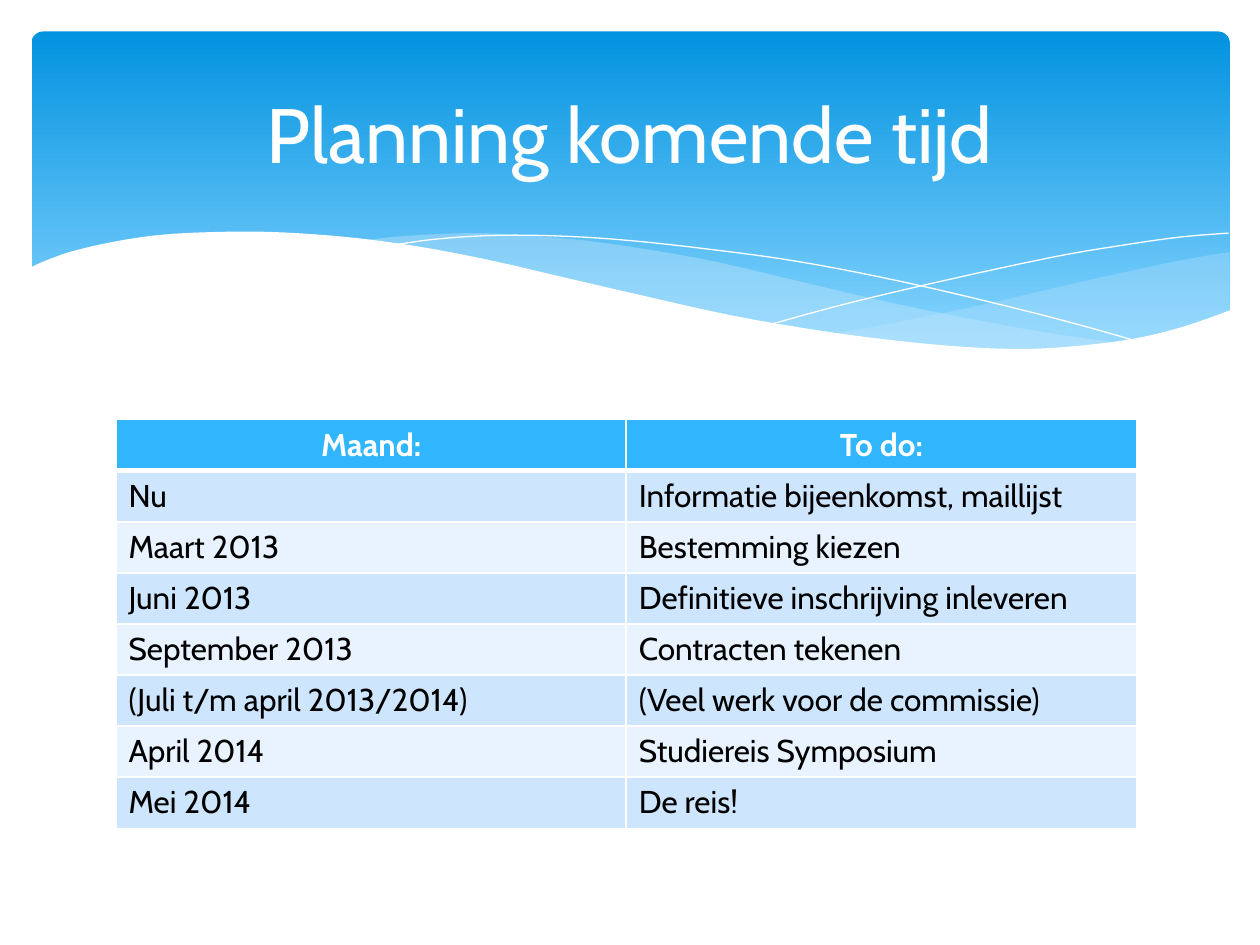
"""Build the planning slide: a wave banner with a title above a month table."""
from itertools import product

from lxml import etree
from pptx import Presentation
from pptx.dml.color import RGBColor
from pptx.enum import shapes, text
from pptx.oxml.ns import qn
from pptx.util import Inches, Pt

THEME = {
    "font": "Cabin", "title_size": 44, "table_size": 18,
    "white": "FFFFFF", "black": "000000",
    "banner_top": "0293E0", "banner_bottom": "83D3FE", "wave": "C6E7FC",
    "header": "31B6FD", "bands": ("CEE5FE", "E8F3FF"),
}
TITLE = "Planning komende tijd"
ROWS = [
    ("Maand:", "To do:"),
    ("Nu", "Informatie bijeenkomst, maillijst"),
    ("Maart 2013", "Bestemming kiezen"),
    ("Juni 2013", "Definitieve inschrijving inleveren"),
    ("September 2013", "Contracten tekenen"),
    ("(Juli t/m april 2013/2014)", "(Veel werk voor de commissie)"),
    ("April 2014", "Studiereis Symposium"),
    ("Mei 2014", "De reis!"),
]
RIGHT_WAVE = [
    [(9.76, 2), (9.35, 2.07), (8.61, 2.23), (7.79, 2.42), (7.06, 2.57), (6.61, 2.65)],
    [(6.61, 2.65), (7.05, 2.71), (7.57, 2.76), (8.03, 2.78), (8.54, 2.76),
     (8.97, 2.7), (9.35, 2.62), (9.76, 2.47)],
]
LEFT_WAVE = [
    [(8.93, 2.73), (8.37, 2.65), (7.75, 2.54), (7.06, 2.4), (6.29, 2.22),
     (5.69, 2.08), (5.14, 1.98), (4.65, 1.91), (4.2, 1.87), (3.8, 1.85),
     (3.44, 1.86), (3.13, 1.88), (2.86, 1.91)],
    [(2.86, 1.91), (3.42, 1.99), (4.04, 2.11), (4.91, 2.32), (5.66, 2.48),
     (6.34, 2.61), (6.95, 2.7), (7.48, 2.76), (7.96, 2.78), (8.48, 2.77), (8.93, 2.73)],
]
LONG_LINE = [[
    (3.09, 1.95), (3.44, 1.9), (3.87, 1.87), (4.33, 1.87), (4.89, 1.9),
    (5.56, 1.97), (6.36, 2.08), (7.27, 2.26), (8.31, 2.51), (9.07, 2.72)]]
SHORT_LINE = [[
    (6.13, 2.57), (6.72, 2.41), (7.48, 2.23), (8.36, 2.04), (8.95, 1.94),
    (9.38, 1.88), (9.75, 1.85)]]
WHITE_WAVE = [
    [(9.77, 2.46), (9.4, 2.59), (8.99, 2.69), (8.5, 2.75), (8.09, 2.77),
     (7.61, 2.75), (7.08, 2.7), (6.48, 2.62), (5.79, 2.5), (5.03, 2.33),
     (4.47, 2.2), (3.91, 2.07), (3.4, 1.97), (2.92, 1.9), (2.5, 1.86),
     (2.11, 1.84), (1.77, 1.84), (1.32, 1.86), (0.95, 1.91), (0.59, 1.99),
     (0.36, 2.07), (0.23, 2.13)],
    [(0.23, 3.29), (9.77, 3.29)],
]


def color(name):
    return RGBColor.from_string(THEME.get(name, name))


def smooth_curve(knots, steps=6):
    """Return points on a Catmull-Rom curve through the knots."""
    if len(knots) < 3:
        return knots
    padded = [knots[0], *knots, knots[-1]]
    points = []
    for a, b, c, d in zip(padded, padded[1:], padded[2:], padded[3:]):
        for step in range(steps):
            t = step / steps
            points.append(tuple(
                q + t / 2 * (r - p + t * (2 * p - 5 * q + 4 * r - s
                                          + t * (3 * q - p - 3 * r + s)))
                for p, q, r, s in zip(a, b, c, d)))
    return points + [knots[-1]]


def add_curve(slide, curves, fill=None, alpha=100):
    """Add a filled wave, or a white hairline when no fill is given."""
    points = [(Inches(x), Inches(y)) for knots in curves for x, y in smooth_curve(knots)]
    builder = slide.shapes.build_freeform(*points[0])
    builder.add_line_segments(points[1:], close=fill is not None)
    shape = builder.convert_to_shape()
    shape.shadow.inherit = False
    if fill is None:
        shape.fill.background()
        shape.line.color.rgb = color("white")
        shape.line.width = Pt(0)
        return
    shape.line.fill.background()
    shape.fill.solid()
    shape.fill.fore_color.rgb = color(fill)
    if alpha < 100:
        tint = shape.element.spPr.find(qn("a:solidFill"))[0]
        etree.SubElement(tint, qn("a:alpha"), val=str(alpha * 1000))


def add_banner(slide):
    """Add the gradient banner and the waves over it."""
    banner = slide.shapes.add_shape(
        shapes.MSO_SHAPE.ROUNDED_RECTANGLE,
        Inches(0.25), Inches(0.25), Inches(9.51), Inches(2.7))
    banner.adjustments[0] = 0.034
    banner.shadow.inherit = False
    banner.line.fill.background()
    banner.fill.gradient()
    banner.fill.gradient_angle = 270
    stops = ((0, "banner_top"), (0.9, "banner_bottom"))
    for stop, (position, name) in zip(banner.fill.gradient_stops, stops):
        stop.position = position
        stop.color.rgb = color(name)
    add_curve(slide, RIGHT_WAVE, "wave", 29)
    add_curve(slide, LEFT_WAVE, "wave", 40)
    add_curve(slide, LONG_LINE)
    add_curve(slide, SHORT_LINE)
    add_curve(slide, WHITE_WAVE, "white")


def style_text(paragraph, size, name, bold=False):
    paragraph.font.name = THEME["font"]
    paragraph.font.size = Pt(THEME[size])
    paragraph.font.bold = bold
    paragraph.font.color.rgb = color(name)


def set_borders(cell, widths):
    """Give the cell white borders, widths in points by side."""
    properties = cell._tc.get_or_add_tcPr()
    for index, (side, width) in enumerate(widths.items()):
        line = etree.Element(qn(f"a:ln{side}"), w=str(Pt(width)))
        fill = etree.SubElement(line, qn("a:solidFill"))
        etree.SubElement(fill, qn("a:srgbClr"), val=THEME["white"])
        properties.insert(index, line)


def add_planning(slide):
    """Add the table of months and tasks."""
    count, columns = len(ROWS), len(ROWS[0])
    table = slide.shapes.add_table(
        count, columns, Inches(0.92), Inches(3.33), Inches(8.1), Inches(3.24)).table
    for row, column in product(range(count), range(columns)):
        cell, header = table.cell(row, column), row == 0
        cell.text = ROWS[row][column]
        paragraph = cell.text_frame.paragraphs[0]
        style_text(paragraph, "table_size", "white" if header else "black", header)
        if header:
            paragraph.alignment = text.PP_ALIGN.CENTER
        cell.fill.solid()
        cell.fill.fore_color.rgb = color("header" if header else THEME["bands"][(row - 1) % 2])
        set_borders(cell, {"L": 1, "R": 1, "T": 3 if row == 1 else 1, "B": 3 if header else 1})


def place_title(slide):
    """Move the title in front of the banner and format it."""
    title = slide.shapes.title
    title.left, title.top = Inches(0.5), Inches(0.37)
    title.width, title.height = Inches(9), Inches(1.37)
    title.text_frame.text = TITLE
    title.text_frame.vertical_anchor = text.MSO_ANCHOR.MIDDLE
    paragraph = title.text_frame.paragraphs[0]
    paragraph.alignment = text.PP_ALIGN.CENTER
    style_text(paragraph, "title_size", "white")
    title.element.getparent().append(title.element)


def main():
    presentation = Presentation()
    presentation.slide_width, presentation.slide_height = Inches(10), Inches(7.5)
    slide = presentation.slides.add_slide(presentation.slide_layouts.get_by_name("Title Only"))
    add_banner(slide)
    add_planning(slide)
    place_title(slide)
    presentation.save("out.pptx")


if __name__ == "__main__":
    main()
